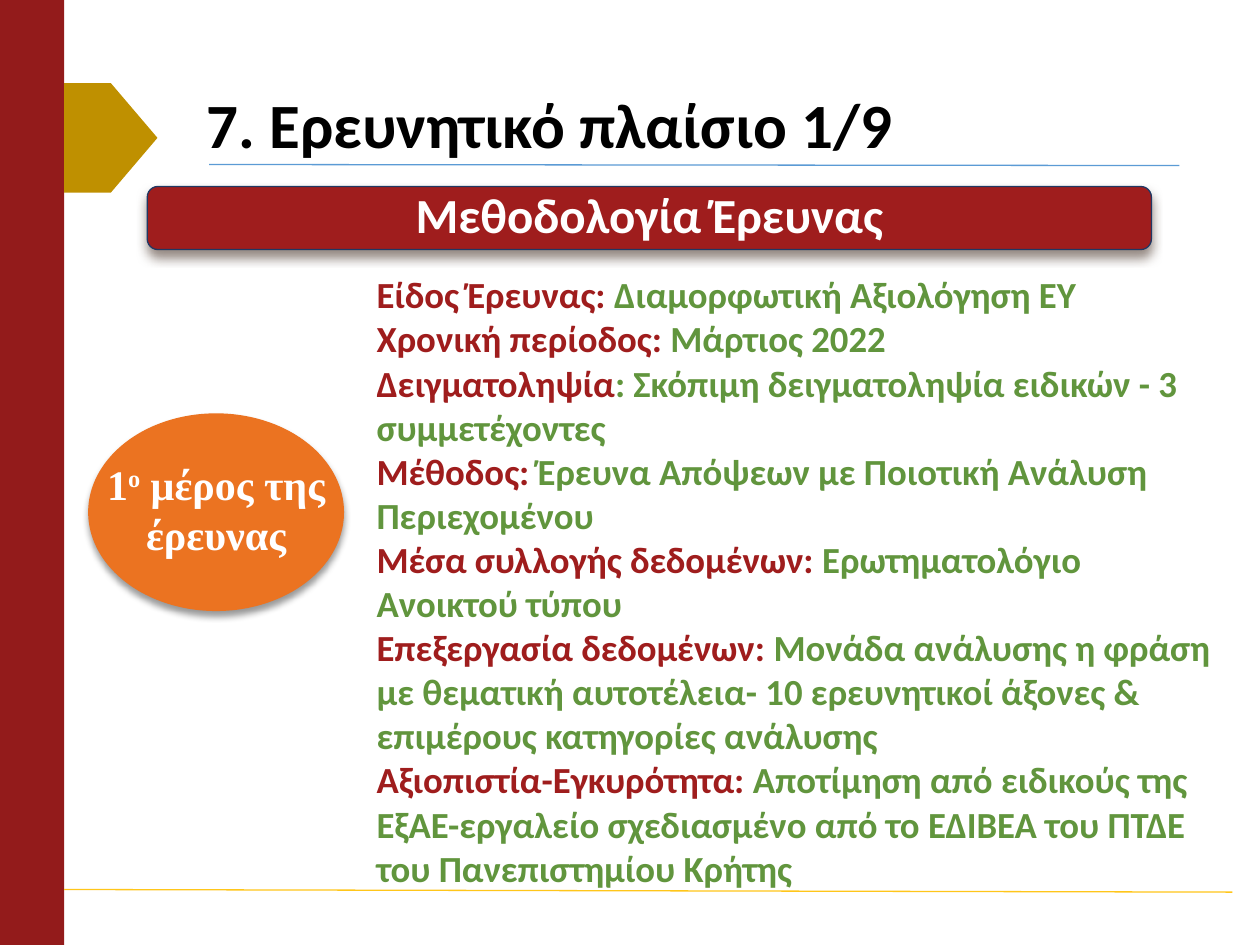
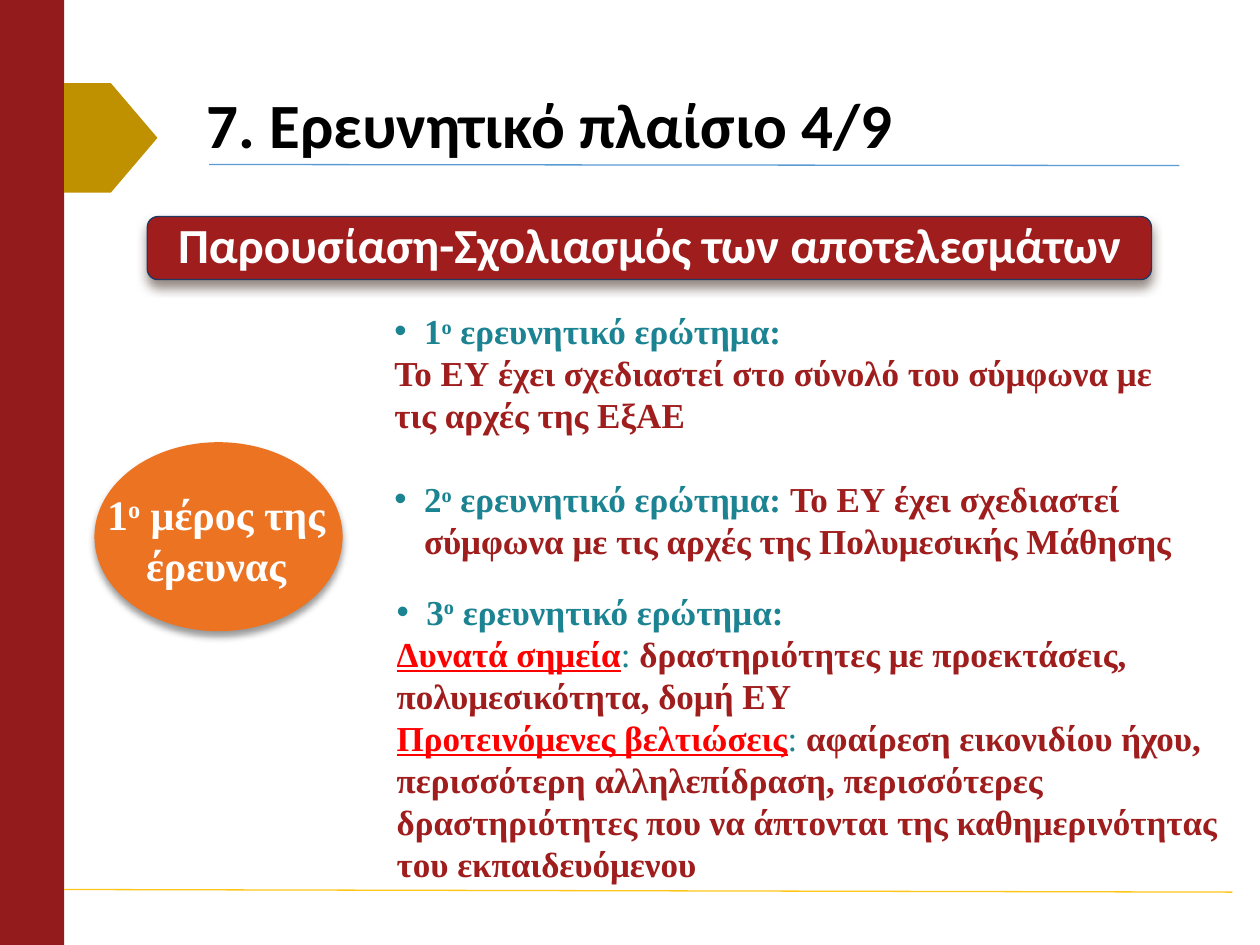
"""Build two slides on the research framework of a study."""
from dataclasses import dataclass
from typing import NamedTuple

from lxml.etree import SubElement
from pptx import Presentation
from pptx.dml.color import RGBColor
from pptx.enum.shapes import MSO_CONNECTOR, MSO_SHAPE
from pptx.enum.text import MSO_ANCHOR, PP_ALIGN
from pptx.oxml.ns import qn
from pptx.util import Pt

COLORS = {
    "band": "931B1B", "crimson": "9F1D1D", "gold": "BF9000", "yellow": "FFC61A",
    "blue": "5B9BD5", "navy": "203864", "orange": "EB7321", "green": "61953D",
    "teal": "1B8391", "red": "FF0000", "white": "FFFFFF", "black": "000000",
    "brown": "4E3B30",
}
SANS, SERIF = "Calibri", "Times New Roman"
BULLET_INDENT = 17
BLANK_LINE = 24


class Area(NamedTuple):
    left: float
    top: float
    width: float
    height: float

    def lengths(self) -> list:
        return [Pt(value) for value in self]


class Shadow(NamedTuple):
    color: str
    opacity: int
    blur: float
    distance: float


class Rule(NamedTuple):
    start: tuple
    end: tuple
    color: str


@dataclass(frozen=True)
class Span:
    text: str
    color: str
    bold: bool = True
    underline: bool = False
    raised: bool = False


@dataclass(frozen=True)
class Para:
    spans: list
    bullet: bool = False
    space_before: float = 0


class TextBlock(NamedTuple):
    area: Area
    paras: list
    format: dict


class Page(NamedTuple):
    title: str
    banner: str
    banner_top: float
    ellipse: Area
    part_label_top: float
    blocks: list


BAND = Area(0, 0, 36.7, 540)
ARROW_TAB = Area(36.7, 47.5, 53.3, 62.6)
TITLE = Area(110.9, 43.2, 566.6, 60.5)
RULES = [
    Rule((119.5, 94), (674, 94.6), "blue"),
    Rule((36.7, 508.3), (704.2, 509.8), "yellow"),
]
BANNER_SHADOW = Shadow("brown", 60, 6, 4)
ELLIPSE_SHADOW = Shadow("black", 40, 4, 3)


def rgb(name: str) -> RGBColor:
    return RGBColor.from_string(COLORS[name])


def ordinal(number: int, rest: str, color: str) -> list:
    return [Span(str(number), color), Span("ο", color, raised=True), Span(rest, color)]


def fact(label: str, value: str) -> Para:
    return Para([Span(label, "crimson"), Span(value, "green")])


def finding(label: str, value: str) -> Para:
    return Para([
        Span(label, "red", underline=True),
        Span(": ", "teal", bold=False),
        Span(value, "crimson"),
    ])


def question(number: int, answer: str = "", space_before: float = 0) -> Para:
    tail = " ερευνητικό ερώτημα:"
    spans = ordinal(number, tail + " " if answer else tail, "teal")
    if answer:
        spans.append(Span(answer, "crimson"))
    return Para(spans, bullet=True, space_before=space_before)


def write_text(frame, paras: list, *, size: float, font: str, align=PP_ALIGN.LEFT,
               anchor=MSO_ANCHOR.TOP, line_spacing: float = 1.0,
               inset: tuple = (7.2, 3.6), top_inset: float | None = None) -> None:
    frame.word_wrap = True
    frame.vertical_anchor = anchor
    frame.margin_left = frame.margin_right = Pt(inset[0])
    frame.margin_bottom = Pt(inset[1])
    frame.margin_top = Pt(inset[1] if top_inset is None else top_inset)
    for index, para in enumerate(paras):
        line = frame.add_paragraph() if index else frame.paragraphs[0]
        line.alignment = align
        line.line_spacing = line_spacing
        line.space_before = Pt(para.space_before)
        if para.bullet:
            add_bullet(line)
        for span in para.spans:
            run = line.add_run()
            run.text = span.text
            run.font.size = Pt(size)
            run.font.name = font
            run.font.bold = span.bold
            run.font.underline = span.underline
            run.font.color.rgb = rgb(span.color)
            if span.raised:
                run.font._element.set("baseline", "30000")


def add_bullet(line) -> None:
    properties = line._p.get_or_add_pPr()
    properties.set("marL", str(Pt(BULLET_INDENT)))
    properties.set("indent", str(-Pt(BULLET_INDENT)))
    SubElement(properties, qn("a:buFont")).set("typeface", "Arial")
    SubElement(properties, qn("a:buChar")).set("char", "•")


def add_text(slide, area: Area, paras: list, **text_format) -> None:
    box = slide.shapes.add_textbox(*area.lengths())
    write_text(box.text_frame, paras, **text_format)


def add_figure(slide, kind, area: Area, fill: str, line: str | None = None,
               shadow: Shadow | None = None):
    figure = slide.shapes.add_shape(kind, *area.lengths())
    figure.shadow.inherit = False
    figure.fill.solid()
    figure.fill.fore_color.rgb = rgb(fill)
    if line:
        figure.line.color.rgb = rgb(line)
        figure.line.width = Pt(0.75)
    else:
        figure.line.fill.background()
    if shadow:
        effects = figure._element.spPr.find(qn("a:effectLst"))
        outer = SubElement(effects, qn("a:outerShdw"), blurRad=str(Pt(shadow.blur)),
                           dist=str(Pt(shadow.distance)), dir="5400000", rotWithShape="0")
        color = SubElement(outer, qn("a:srgbClr"), val=COLORS[shadow.color])
        SubElement(color, qn("a:alpha"), val=str(shadow.opacity * 1000))
    return figure


def add_rule(slide, rule: Rule) -> None:
    ends = [Pt(value) for value in rule.start + rule.end]
    connector = slide.shapes.add_connector(MSO_CONNECTOR.STRAIGHT, *ends)
    connector.line.color.rgb = rgb(rule.color)
    connector.line.width = Pt(0.75)
    SubElement(connector._element.spPr, qn("a:effectLst"))


def add_page(deck, page: Page) -> None:
    slide = deck.slides.add_slide(deck.slide_layouts[6])
    add_figure(slide, MSO_SHAPE.RECTANGLE, BAND, "band")
    for rule in RULES:
        add_rule(slide, rule)
    add_figure(slide, MSO_SHAPE.PENTAGON, ARROW_TAB, "gold")
    add_text(slide, TITLE, [Para([Span(page.title, "black")])], size=36, font=SANS,
             anchor=MSO_ANCHOR.MIDDLE, line_spacing=0.9)
    banner = add_figure(slide, MSO_SHAPE.ROUNDED_RECTANGLE,
                        Area(84.2, page.banner_top, 573.8, 36),
                        "crimson", "navy", BANNER_SHADOW)
    write_text(banner.text_frame, [Para([Span(page.banner, "white")])], size=28, font=SANS,
               align=PP_ALIGN.CENTER, anchor=MSO_ANCHOR.MIDDLE, line_spacing=0.9,
               inset=(8.6, 8.6))
    add_figure(slide, MSO_SHAPE.OVAL, page.ellipse, "orange", shadow=ELLIPSE_SHADOW)
    add_text(slide, Area(50.4, page.part_label_top, 146.2, 65.5),
             [Para(ordinal(1, " μέρος της έρευνας", "white"))],
             size=24, font=SERIF, align=PP_ALIGN.CENTER)
    for block in page.blocks:
        add_text(slide, block.area, block.paras, **block.format)


METHOD_FACTS = [
    fact("Είδος Έρευνας: ", "Διαμορφωτική Αξιολόγηση ΕΥ"),
    fact("Χρονική περίοδος: ", "Μάρτιος 2022"),
    fact("Δειγματοληψία", ": Σκόπιμη δειγματοληψία ειδικών - 3 συμμετέχοντες"),
    fact("Μέθοδος: ", "Έρευνα Απόψεων με Ποιοτική Ανάλυση Περιεχομένου"),
    fact("Μέσα συλλογής δεδομένων: ", "Ερωτηματολόγιο Ανοικτού τύπου"),
    fact("Επεξεργασία δεδομένων: ",
         "Μονάδα ανάλυσης η φράση με θεματική αυτοτέλεια- 10 ερευνητικοί άξονες "
         "& επιμέρους κατηγορίες ανάλυσης"),
    fact("Αξιοπιστία-Εγκυρότητα: ",
         "Αποτίμηση από ειδικούς της ΕξΑΕ-εργαλείο σχεδιασμένο από το ΕΔΙΒΕΑ "
         "του ΠΤΔΕ του Πανεπιστημίου Κρήτης"),
]
DESIGN_ANSWERS = [
    question(1),
    Para([Span("Το ΕΥ έχει σχεδιαστεί στο σύνολό του σύμφωνα με τις αρχές της ΕξΑΕ",
               "crimson")]),
    question(2, "Το ΕΥ έχει σχεδιαστεί σύμφωνα με τις αρχές της Πολυμεσικής Μάθησης",
             space_before=BLANK_LINE),
]
REVIEW_ANSWERS = [
    question(3),
    finding("Δυνατά σημεία", "δραστηριότητες με προεκτάσεις, πολυμεσικότητα, δομή ΕΥ"),
    finding("Προτεινόμενες βελτιώσεις",
            "αφαίρεση εικονιδίου ήχου, περισσότερη αλληλεπίδραση, περισσότερες "
            "δραστηριότητες που να άπτονται της καθημερινότητας του εκπαιδευόμενου"),
]
ANSWER_FORMAT = {"size": 20, "font": SERIF}
PAGES = [
    Page("7. Ερευνητικό πλαίσιο 1/9", "Μεθοδολογία Έρευνας", 106.6,
         Area(50.4, 236.2, 146.2, 113), 258.5,
         [TextBlock(Area(208.1, 157.7, 495.4, 348.5), METHOD_FACTS,
                    {"size": 21, "font": SANS, "anchor": MSO_ANCHOR.MIDDLE,
                     "inset": (7.2, 7.2)})]),
    Page("7. Ερευνητικό πλαίσιο 4/9", "Παρουσίαση-Σχολιασμός των αποτελεσμάτων", 123.8,
         Area(54, 252.7, 141.8, 108), 275.8,
         [TextBlock(Area(218.2, 173.5, 475.9, 177.1), DESIGN_ANSWERS, ANSWER_FORMAT),
          TextBlock(Area(219.6, 309.6, 500.4, 200.9), REVIEW_ANSWERS,
                    ANSWER_FORMAT | {"top_inset": 3.6 + BLANK_LINE})]),
]


def main() -> None:
    deck = Presentation()
    deck.slide_width, deck.slide_height = Pt(720), Pt(540)
    for page in PAGES:
        add_page(deck, page)
    deck.save("out.pptx")


if __name__ == "__main__":
    main()
